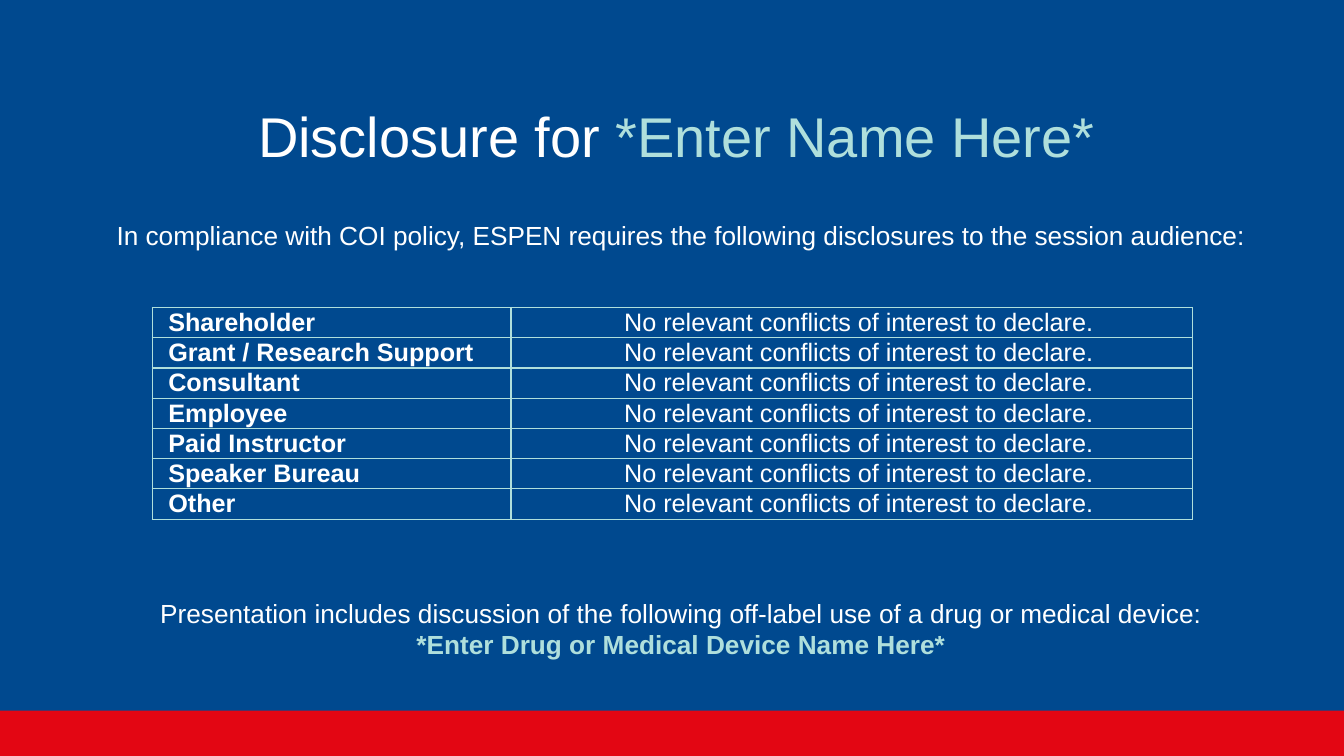
from dataclasses import dataclass

from lxml.etree import SubElement
from pptx import Presentation
from pptx.dml.color import RGBColor as Rgb
from pptx.enum.shapes import MSO_SHAPE as Shape
from pptx.enum.text import MSO_ANCHOR as Anchor, MSO_AUTO_SIZE as AutoSize, PP_ALIGN as Align
from pptx.oxml.ns import qn
from pptx.util import Inches, Pt


@dataclass(frozen=True)
class Theme:
    font: str = "Arial"
    blue: str = "00498F"
    red: str = "E30613"
    mint: str = "AFDFDC"
    white: str = "FFFFFF"
    title_size: float = 40
    body_size: float = 18.7
    table_size: float = 18
    border_width: float = 1


THEME = Theme()

# Slide grid: 40 columns by 30 rows
WIDTH, HEIGHT = Inches(13.33), Inches(7.5)
COLUMNS, ROWS = 40, 30

TITLE = ("Disclosure for ", "*Enter Name Here*")
POLICY = ("In compliance with COI policy, ESPEN requires the following "
          "disclosures to the session audience:")
OFF_LABEL = ("Presentation includes discussion of the following off-label use "
             "of a drug or medical device:")
DEVICE = "*Enter Drug or Medical Device Name Here*"
INTERESTS = ("Shareholder", "Grant / Research Support", "Consultant", "Employee",
             "Paid Instructor", "Speaker Bureau", "Other")
DECLARATION = "No relevant conflicts of interest to declare."


def across(columns):
    return round(WIDTH * columns / COLUMNS)


def down(rows):
    return round(HEIGHT * rows / ROWS)


def area(left, top, width, height):
    return across(left), down(top), across(width), down(height)


def style(run, size, color=THEME.white, bold=False):
    font = run.font
    font.name, font.size, font.bold = THEME.font, Pt(size), bold
    font.color.rgb = Rgb.from_string(color)


def place(placeholder, left, top, width, height):
    (placeholder.left, placeholder.top,
     placeholder.width, placeholder.height) = area(left, top, width, height)
    frame = placeholder.text_frame
    frame.word_wrap = True
    frame.auto_size = AutoSize.NONE
    return frame


def add_footer_band(slide):
    band = slide.shapes.add_shape(Shape.RECTANGLE, *area(0, 28.2, COLUMNS, 1.8))
    band.shadow.inherit = False
    band.fill.solid()
    band.fill.fore_color.rgb = Rgb.from_string(THEME.red)
    band.line.fill.background()


def fill_title(slide):
    frame = place(slide.shapes.title, 7.38, 3.88, 30.57, 3.28)
    frame.vertical_anchor = Anchor.MIDDLE
    heading = frame.paragraphs[0]
    heading.alignment = Align.LEFT
    heading.line_spacing = 0.9
    for text, color in zip(TITLE, (THEME.white, THEME.mint)):
        run = heading.add_run()
        run.text = text
        style(run, THEME.title_size, color)


def fill_statements(slide):
    frame = place(slide.placeholders[1], 2.58, 8.72, 35.37, 17.4)
    frame.vertical_anchor = Anchor.TOP
    frame.margin_top = frame.margin_bottom = 0
    frame.text = "\n".join((POLICY, OFF_LABEL, DEVICE))
    # The wide gap before the second statement leaves room for the table
    looks = ((0, THEME.white, False), (247, THEME.white, False), (0, THEME.mint, True))
    for statement, (gap, color, bold) in zip(frame.paragraphs, looks):
        properties = statement._p.get_or_add_pPr()
        properties.set("marL", "0")
        properties.set("indent", "0")
        SubElement(properties, qn("a:buNone"))
        statement.alignment = Align.CENTER
        statement.line_spacing = 1.0
        statement.space_before = Pt(gap)
        statement.space_after = Pt(0)
        style(statement.runs[0], THEME.body_size, color, bold)


def draw_borders(cell):
    properties = cell._tc.get_or_add_tcPr()
    for position, side in enumerate(("a:lnL", "a:lnR", "a:lnT", "a:lnB")):
        border = SubElement(properties, qn(side), w=str(Pt(THEME.border_width)))
        SubElement(SubElement(border, qn("a:solidFill")), qn("a:srgbClr"), val=THEME.mint)
        properties.insert(position, border)


def fill_cell(cell, text, alignment, bold):
    cell.text = text
    cell.vertical_anchor = Anchor.MIDDLE
    cell.margin_left, cell.margin_right = Inches(0.16), Inches(0.02)
    cell.margin_top = cell.margin_bottom = Inches(0.01)
    cell.fill.solid()
    cell.fill.fore_color.rgb = Rgb.from_string(THEME.blue)
    entry = cell.text_frame.paragraphs[0]
    entry.alignment = alignment
    style(entry.runs[0], THEME.table_size, bold=bold)
    draw_borders(cell)


def add_disclosures(slide):
    widths, row_height = (10.68, 20.28), 1.2
    bounds = area(4.53, 12.2, sum(widths), row_height * len(INTERESTS))
    disclosures = slide.shapes.add_table(len(INTERESTS), len(widths), *bounds).table
    disclosures.first_row = disclosures.horz_banding = False
    for column, width in zip(disclosures.columns, widths):
        column.width = across(width)
    for row, interest in zip(disclosures.rows, INTERESTS):
        row.height = down(row_height)
        fill_cell(row.cells[0], interest, Align.LEFT, True)
        fill_cell(row.cells[1], DECLARATION, Align.CENTER, False)


def main():
    deck = Presentation()
    deck.slide_width, deck.slide_height = WIDTH, HEIGHT
    slide = deck.slides.add_slide(deck.slide_layouts[1])

    # Background and footer
    slide.background.fill.solid()
    slide.background.fill.fore_color.rgb = Rgb.from_string(THEME.blue)
    add_footer_band(slide)

    # Content
    fill_title(slide)
    fill_statements(slide)
    add_disclosures(slide)

    deck.save("out.pptx")


if __name__ == "__main__":
    main()
